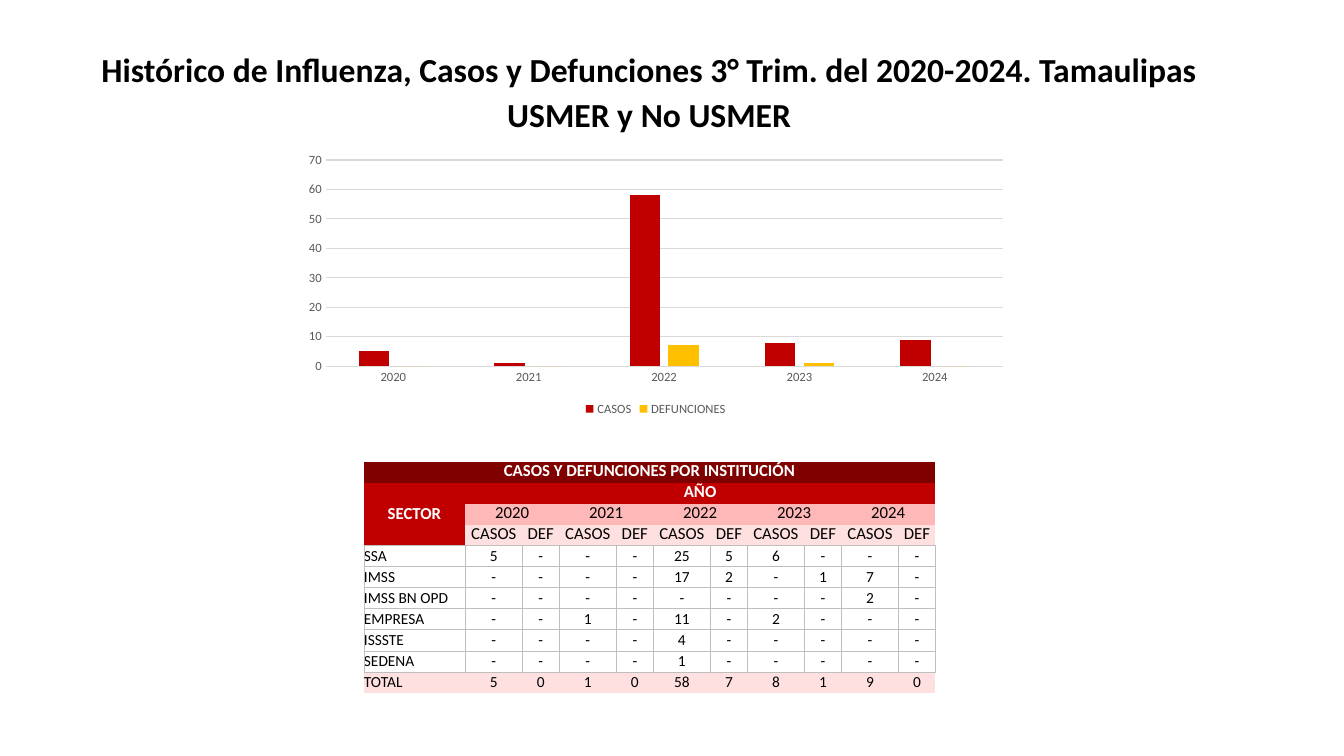
import dataclasses
import typing

import lxml.etree
import pptx
import pptx.chart.data
import pptx.dml.color
import pptx.enum.chart
import pptx.enum.text
import pptx.oxml.ns
import pptx.util

Cm = pptx.util.Cm
Pt = pptx.util.Pt
RGBColor = pptx.dml.color.RGBColor
Align = pptx.enum.text.PP_ALIGN
Anchor = pptx.enum.text.MSO_ANCHOR

BLACK = RGBColor(0x00, 0x00, 0x00)
WHITE = RGBColor(0xFF, 0xFF, 0xFF)
MAROON = RGBColor(0x80, 0x00, 0x00)
RED = RGBColor(0xC0, 0x00, 0x00)
PINK = RGBColor(0xFF, 0xB8, 0xB8)
PALE_PINK = RGBColor(0xFF, 0xE0, 0xE0)
AMBER = RGBColor(0xFF, 0xC0, 0x00)
BORDER_GRAY = RGBColor(0xBE, 0xBE, 0xBE)
GRID_GRAY = RGBColor(0xD9, 0xD9, 0xD9)
LABEL_GRAY = RGBColor(0x59, 0x59, 0x59)
FONT = "Calibri"

YEARS = ["2020", "2021", "2022", "2023", "2024"]
SECTORS = {
    "SSA": "5 - - - 25 5 6 - - -",
    "IMSS": "- - - - 17 2 - 1 7 -",
    "IMSS BN OPD": "- - - - - - - - 2 -",
    "EMPRESA": "- - 1 - 11 - 2 - - -",
    "ISSSTE": "- - - - 4 - - - - -",
    "SEDENA": "- - - - 1 - - - - -",
}
TOTALS = [5, 0, 1, 0, 58, 7, 8, 1, 9, 0]
ROW_HEIGHT = Cm(0.53)
SECTOR_WIDTH = Cm(2.55)
YEAR_WIDTHS = [Cm(1.45), Cm(0.92)]


@dataclasses.dataclass(frozen=True)
class RowStyle:
    fill: typing.Optional[RGBColor]
    color: RGBColor = BLACK
    size: float = 12
    bold: bool = False
    line: typing.Optional[float] = 14.1
    top: float = 0
    edges: str = ""


@dataclasses.dataclass(frozen=True)
class Row:
    texts: list[str]
    style: RowStyle


@dataclasses.dataclass(frozen=True)
class Series:
    name: str
    values: list[int]
    color: RGBColor


BANNER = RowStyle(MAROON, WHITE, bold=True)
YEAR_TITLE = RowStyle(RED, WHITE, bold=True)
YEAR = RowStyle(PINK)
HEADING = RowStyle(PALE_PINK, edges="B")
BODY = RowStyle(None, size=11, line=None, top=0.03, edges="LRTB")
TOTAL = RowStyle(PALE_PINK, size=11, line=None, top=0.03, edges="T")
SECTOR = RowStyle(RED, WHITE, bold=True, line=None, edges="B")

ROWS = [
    Row(["CASOS Y DEFUNCIONES POR INSTITUCIÓN"] + [""] * 10, BANNER),
    Row(["SECTOR", "AÑO"] + [""] * 9, YEAR_TITLE),
    Row([""] + [text for year in YEARS for text in (year, "")], YEAR),
    Row([""] + ["CASOS", "DEF"] * len(YEARS), HEADING),
    *[Row([name, *values.split()], BODY) for name, values in SECTORS.items()],
    Row(["TOTAL", *map(str, TOTALS)], TOTAL),
]
SERIES = [
    Series("CASOS", TOTALS[0::2], RED),
    Series("DEFUNCIONES", TOTALS[1::2], AMBER),
]


def write_text(frame, text: str, *, size: float, color: RGBColor, bold: bool = False,
               align=Align.CENTER, line: typing.Optional[float] = None) -> None:
    for index, words in enumerate(text.split("\n")):
        para = frame.add_paragraph() if index else frame.paragraphs[0]
        para.alignment = align
        if line:
            para.line_spacing = Pt(line)
        span = para.add_run()
        span.text = words
        set_font(span.font, size, color, bold)


def set_font(font, size: float, color: RGBColor, bold: bool = False) -> None:
    font.name = FONT
    font.size = Pt(size)
    font.bold = bold
    font.color.rgb = color


def set_borders(cell, edges: str) -> None:
    properties = cell._tc.get_or_add_tcPr()
    qn = pptx.oxml.ns.qn
    for edge in "LRTB":
        border = lxml.etree.SubElement(properties, qn(f"a:ln{edge}"), w=str(Pt(0.5)))
        if edge in edges:
            paint = lxml.etree.SubElement(border, qn("a:solidFill"))
            lxml.etree.SubElement(paint, qn("a:srgbClr"), val=str(BORDER_GRAY))
        else:
            lxml.etree.SubElement(border, qn("a:noFill"))


def format_cell(cell, text: str, style: RowStyle, align, anchor) -> None:
    cell.margin_left = cell.margin_right = cell.margin_bottom = 0
    cell.margin_top = Cm(style.top)
    cell.vertical_anchor = anchor
    set_borders(cell, style.edges)
    if style.fill is None:
        cell.fill.background()
    else:
        cell.fill.solid()
        cell.fill.fore_color.rgb = style.fill
    if text:
        write_text(cell.text_frame, text, size=style.size, color=style.color,
                   bold=style.bold, align=align, line=style.line)


def add_title(page) -> None:
    box = page.shapes.add_textbox(Cm(2.39), Cm(0.84), Cm(27.94), Cm(2.54))
    frame = box.text_frame
    frame.word_wrap = True
    frame.margin_left = frame.margin_right = frame.margin_bottom = 0
    frame.margin_top = Cm(0.25)
    write_text(frame, "Histórico de Influenza, Casos y Defunciones 3° Trim. del 2020-2024. "
               "Tamaulipas\nUSMER y No USMER", size=24, color=BLACK, bold=True, line=32.5)


def add_sector_table(page) -> None:
    widths = [SECTOR_WIDTH] + YEAR_WIDTHS * len(YEARS)
    table = page.shapes.add_table(len(ROWS), len(widths), Cm(9.17), Cm(11.63),
                                  sum(widths), ROW_HEIGHT * len(ROWS)).table
    table.first_row = table.horz_banding = False
    for column, width in zip(table.columns, widths):
        column.width = width
    for row_index, row in enumerate(ROWS):
        table.rows[row_index].height = ROW_HEIGHT
        for column_index, text in enumerate(row.texts):
            is_sector = column_index == 0 and row_index in (1, 2, 3)
            is_name = column_index == 0 and row_index > 3
            format_cell(table.cell(row_index, column_index), text,
                        SECTOR if is_sector else row.style,
                        Align.LEFT if is_name else Align.CENTER,
                        Anchor.MIDDLE if is_sector else Anchor.TOP)
    table.cell(0, 0).merge(table.cell(0, 10))
    table.cell(1, 0).merge(table.cell(3, 0))
    table.cell(1, 1).merge(table.cell(1, 10))
    for column_index in range(1, len(widths), 2):
        table.cell(2, column_index).merge(table.cell(2, column_index + 1))


def add_case_chart(page) -> None:
    data = pptx.chart.data.CategoryChartData()
    data.categories = YEARS
    for series in SERIES:
        data.add_series(series.name, series.values)
    chart = page.shapes.add_chart(pptx.enum.chart.XL_CHART_TYPE.COLUMN_CLUSTERED,
                                  Cm(7.42), Cm(3.71), Cm(18.21), Cm(6.88), data).chart
    set_font(chart.font, 10, BLACK)
    chart.has_title = False
    chart.has_legend = True
    chart.legend.position = pptx.enum.chart.XL_LEGEND_POSITION.BOTTOM
    chart.legend.include_in_layout = False
    set_font(chart.legend.font, 9, LABEL_GRAY)
    plot = chart.plots[0]
    plot.gap_width = 219
    plot.overlap = -27
    plot.vary_by_categories = False
    for bars, series in zip(plot.series, SERIES):
        bars.format.fill.solid()
        bars.format.fill.fore_color.rgb = series.color
    for axis in (chart.category_axis, chart.value_axis):
        axis.major_tick_mark = pptx.enum.chart.XL_TICK_MARK.NONE
        set_font(axis.tick_labels.font, 9, LABEL_GRAY)
    chart.value_axis.minimum_scale = 0
    chart.value_axis.maximum_scale = 70
    chart.value_axis.major_unit = 10
    chart.value_axis.format.line.fill.background()
    for line in (chart.category_axis.format.line, chart.value_axis.major_gridlines.format.line):
        line.color.rgb = GRID_GRAY
        line.width = Pt(0.75)


def main() -> None:
    deck = pptx.Presentation()
    deck.slide_width = Cm(33.87)
    deck.slide_height = Cm(19.05)
    page = deck.slides.add_slide(deck.slide_layouts[6])
    add_title(page)
    add_sector_table(page)
    add_case_chart(page)
    deck.save("out.pptx")


if __name__ == "__main__":
    main()
